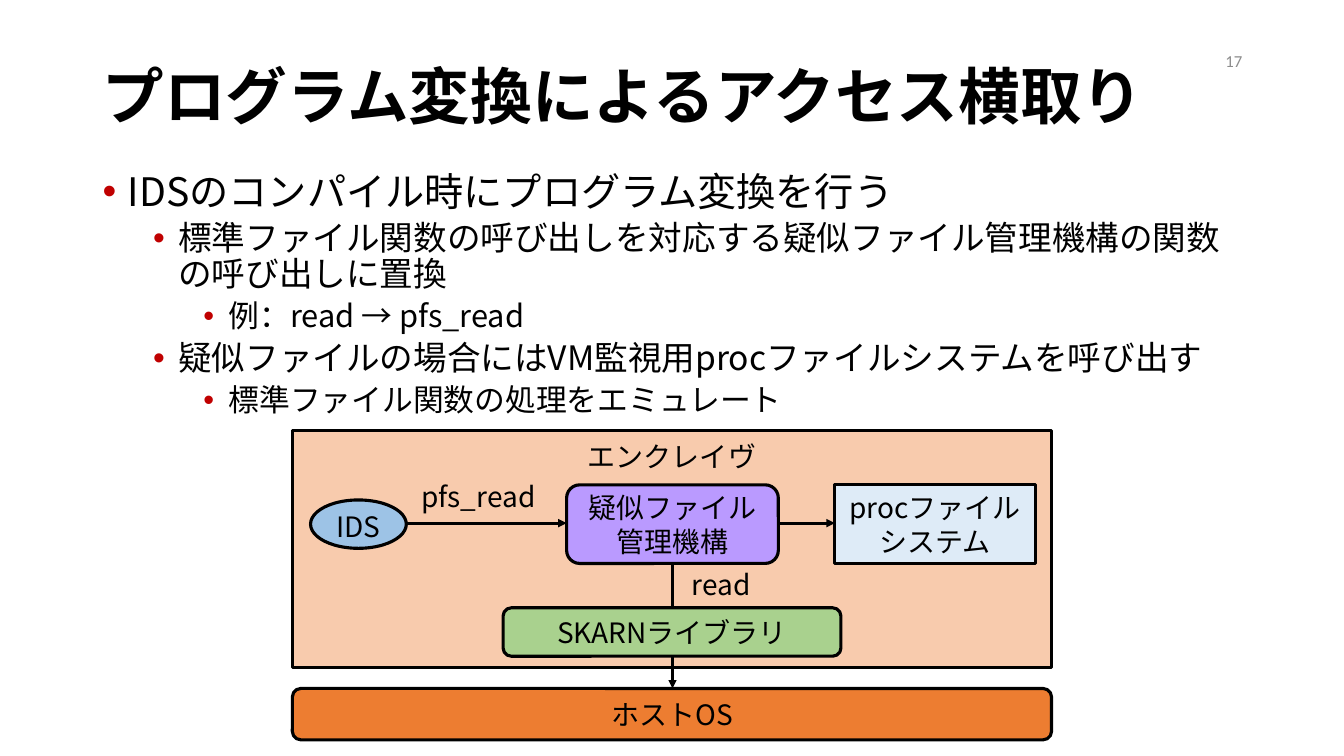
from typing import NamedTuple, Optional

from lxml.etree import SubElement
from pptx import Presentation
from pptx.dml.color import RGBColor
from pptx.enum.shapes import MSO_CONNECTOR, MSO_SHAPE as Preset
from pptx.enum.text import MSO_ANCHOR as Anchor, PP_ALIGN as Align
from pptx.oxml.ns import qn
from pptx.util import Inches, Pt

COLORS = {
    "ink": "000000", "page_number": "8C8C8C", "bullet": "C00000",
    "host": "ED7D31", "enclave": "F8CBAD", "proc": "DEEBF7",
    "ids": "9DC3E6", "pseudo_file": "BA9AFF", "library": "A9D18E",
}
CJK = "Noto Sans CJK JP"
ARROW_Y = 5.19
CENTER_X = 6.67


class Style(NamedTuple):
    size: float = 20
    font: str = CJK
    color: str = "ink"
    bold: bool = False
    align: Align = Align.CENTER
    anchor: Anchor = Anchor.TOP
    line_spacing: Optional[float] = None


class Label(NamedTuple):
    text: str
    box: tuple[float, float, float, float]
    style: Style = Style()


class Component(NamedTuple):
    text: str
    box: tuple[float, float, float, float]
    preset: Preset
    fill: str
    anchor: Anchor = Anchor.MIDDLE
    top_inset: float = 0.05


class Arrow(NamedTuple):
    start: tuple[float, float]
    end: tuple[float, float]


class Point(NamedTuple):
    level: int
    text: str


LEVEL_SIZES = (28, 24, 22)
LABELS = [
    Label("プログラム変換によるアクセス横取り", (0.92, 0.4, 11.5, 1.18),
          Style(44, "Arial", bold=True, align=Align.LEFT, anchor=Anchor.MIDDLE, line_spacing=0.9)),
    Label("17", (9.42, 0.4, 3, 0.4),
          Style(12, "Calibri", "page_number", align=Align.RIGHT, anchor=Anchor.MIDDLE)),
]
POINTS = [
    Point(0, "IDSのコンパイル時にプログラム変換を行う"),
    Point(1, "標準ファイル関数の呼び出しを対応する疑似ファイル管理機構の関数の呼び出しに置換"),
    Point(2, "例：read → pfs_read"),
    Point(1, "疑似ファイルの場合にはVM監視用procファイルシステムを呼び出す"),
    Point(2, "標準ファイル関数の処理をエミュレート"),
]
BACK_COMPONENTS = [
    Component("ホストOS", (2.9, 6.83, 7.53, 0.51), Preset.ROUNDED_RECTANGLE, "host"),
    Component("エンクレイヴ", (2.9, 4.27, 7.53, 2.35), Preset.RECTANGLE, "enclave", Anchor.TOP, 0.09),
    Component("procファイル\nシステム", (8.28, 4.81, 1.99, 0.78), Preset.RECTANGLE, "proc"),
    Component("IDS", (3.08, 4.96, 0.95, 0.48), Preset.OVAL, "ids", top_inset=0.09),
    Component("疑似ファイル\n管理機構", (5.62, 4.81, 2.1, 0.78), Preset.ROUNDED_RECTANGLE, "pseudo_file"),
]
ARROWS = [
    Arrow((4.04, ARROW_Y), (5.62, ARROW_Y)),
    Arrow((7.72, ARROW_Y), (8.28, ARROW_Y)),
    Arrow((CENTER_X, 5.58), (CENTER_X, 6.83)),
]
LIBRARY = Component("SKARNライブラリ", (4.99, 6.03, 3.35, 0.48), Preset.ROUNDED_RECTANGLE, "library")
CALL_LABELS = [
    Label("read", (6.63, 5.58, 1.05, 0.44)),
    Label("pfs_read", (4.04, 4.71, 1.41, 0.44)),
]


def rgb(name: str) -> RGBColor:
    """Look up a named colour."""
    return RGBColor.from_string(COLORS[name])


def style_paragraph(paragraph, style: Style) -> None:
    """Apply font, colour and alignment to a paragraph."""
    paragraph.alignment = style.align
    paragraph.line_spacing = style.line_spacing
    font = paragraph.font
    font.size, font.name, font.bold = Pt(style.size), style.font, style.bold
    font.color.rgb = rgb(style.color)
    east_asian = SubElement(font._element, qn("a:ea"))
    east_asian.set("typeface", CJK)


def write_text(frame, text: str, style: Style) -> None:
    """Fill a text frame, one paragraph per line."""
    frame.word_wrap = True
    frame.vertical_anchor = style.anchor
    frame.text = text
    for paragraph in frame.paragraphs:
        style_paragraph(paragraph, style)


def add_label(slide, label: Label) -> None:
    """Draw a text label."""
    frame = slide.shapes.add_textbox(*map(Inches, label.box)).text_frame
    write_text(frame, label.text, label.style)


def add_bullet(paragraph, level: int) -> None:
    """Give a paragraph a bullet and a hanging indent."""
    properties = paragraph._p.get_or_add_pPr()
    properties.set("marL", str(Inches(0.25 + 0.5 * level)))
    properties.set("indent", str(Inches(-0.25)))
    bullet_color = SubElement(properties, qn("a:buClr"))
    SubElement(bullet_color, qn("a:srgbClr")).set("val", COLORS["bullet"])
    SubElement(properties, qn("a:buFont")).set("typeface", "Arial")
    SubElement(properties, qn("a:buChar")).set("char", "•")


def add_points(slide, points: list[Point]) -> None:
    """Draw the bulleted explanation."""
    frame = slide.shapes.add_textbox(*map(Inches, (0.92, 1.66, 11.5, 5.1))).text_frame
    frame.word_wrap = True
    frame.text = "\n".join(point.text for point in points)
    for paragraph, point in zip(frame.paragraphs, points):
        paragraph.level = point.level
        add_bullet(paragraph, point.level)
        paragraph.space_before = Pt(5 if point.level else 10)
        style_paragraph(paragraph, Style(LEVEL_SIZES[point.level], align=Align.LEFT, line_spacing=0.9))


def add_component(slide, component: Component) -> None:
    """Draw an outlined system component."""
    block = slide.shapes.add_shape(component.preset, *map(Inches, component.box))
    block.shadow.inherit = False
    block.fill.solid()
    block.fill.fore_color.rgb = rgb(component.fill)
    block.line.color.rgb = rgb("ink")
    block.line.width = Pt(2.25)
    block.text_frame.margin_top = Inches(component.top_inset)
    write_text(block.text_frame, component.text, Style(anchor=component.anchor))


def add_arrow(slide, arrow: Arrow) -> None:
    """Draw a call arrow between components."""
    call = slide.shapes.add_connector(MSO_CONNECTOR.STRAIGHT, *map(Inches, arrow.start + arrow.end))
    call.line.color.rgb = rgb("ink")
    call.line.width = Pt(2)
    SubElement(call.line._get_or_add_ln(), qn("a:tailEnd")).set("type", "triangle")
    SubElement(call._element.spPr, qn("a:effectLst"))


def main() -> None:
    """Build and save the slide."""
    deck = Presentation()
    deck.slide_width, deck.slide_height = Inches(13.33), Inches(7.5)
    slide = deck.slides.add_slide(deck.slide_layouts[6])
    for label in LABELS:
        add_label(slide, label)
    add_points(slide, POINTS)
    for component in BACK_COMPONENTS:
        add_component(slide, component)
    for arrow in ARROWS:
        add_arrow(slide, arrow)
    add_component(slide, LIBRARY)
    for label in CALL_LABELS:
        add_label(slide, label)
    deck.save("out.pptx")


if __name__ == "__main__":
    main()
